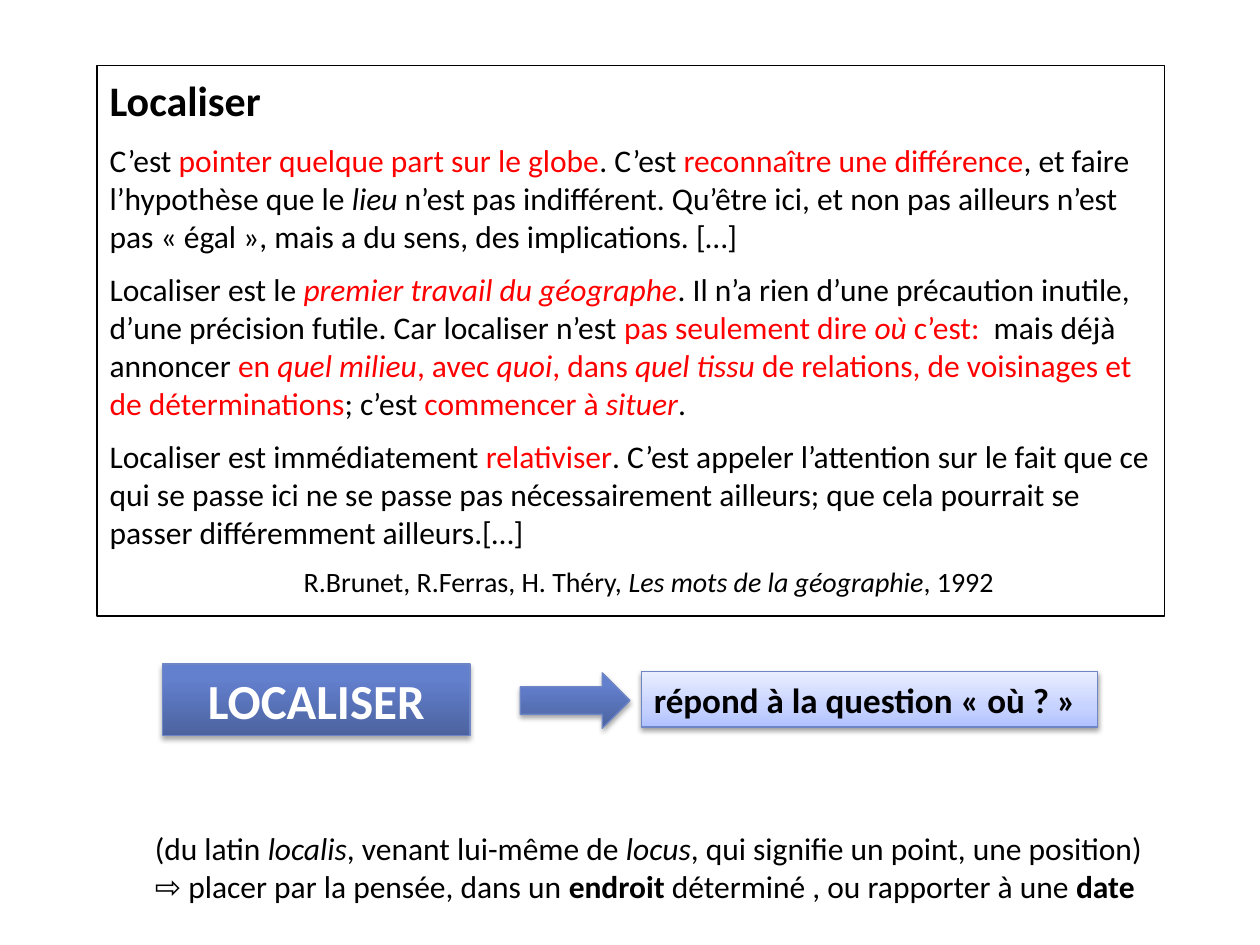
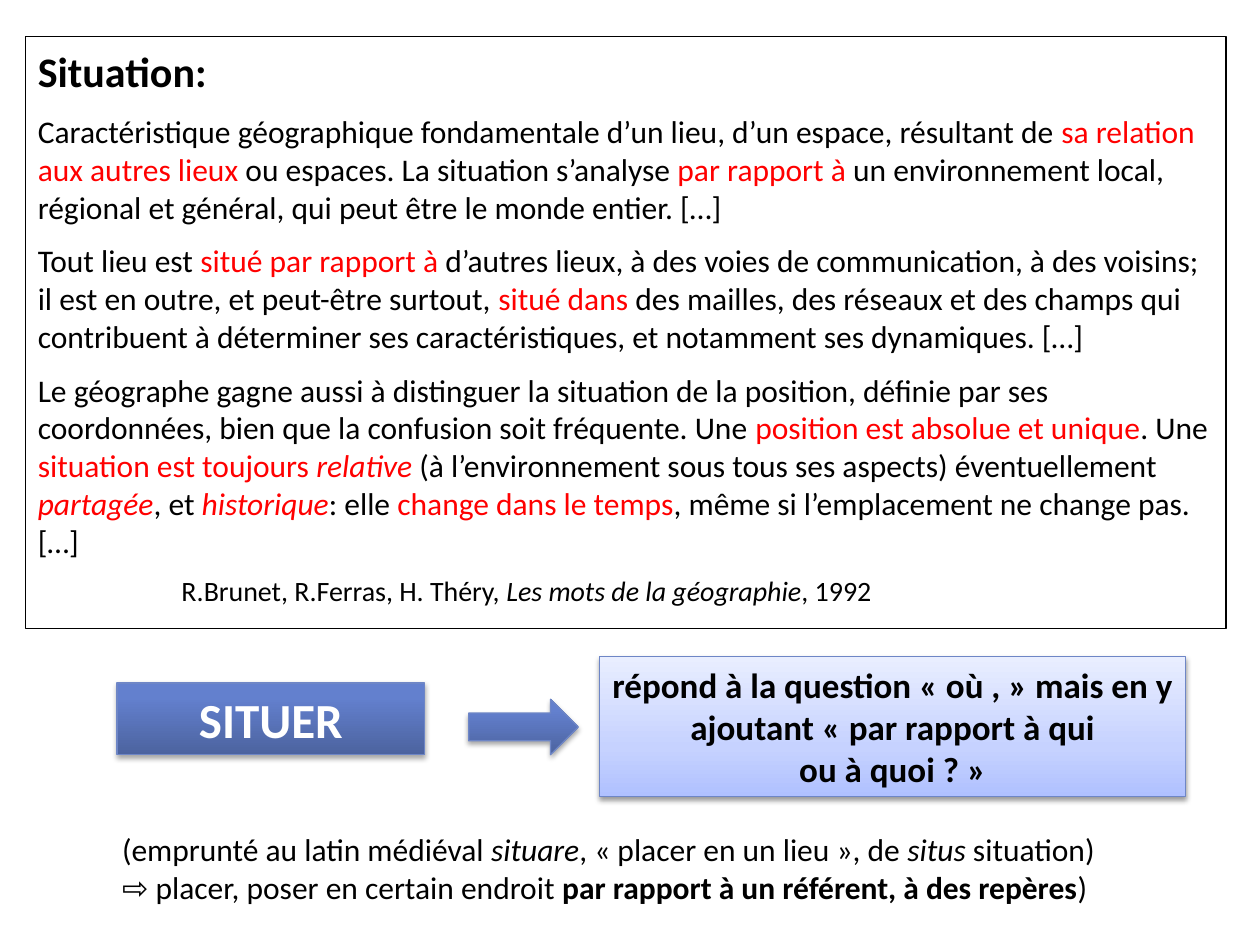
"""Builds two slides that define the geography terms localiser and situation."""
from dataclasses import dataclass

from lxml.etree import SubElement
from pptx import Presentation
from pptx.dml.color import RGBColor
from pptx.enum.shapes import MSO_SHAPE
from pptx.enum.text import MSO_ANCHOR, MSO_AUTO_SIZE, PP_ALIGN
from pptx.oxml.ns import qn
from pptx.util import Inches, Pt


@dataclass(frozen=True)
class Theme:
    font: str = "Calibri"
    ink: str = "000000"
    accent: str = "FF0000"
    light: str = "FFFFFF"
    edge: str = "6E86C6"
    dark_blue: tuple = ((0, "4C639F"), (80, "6380CE"), (100, "6180D1"))
    pale_blue: tuple = ((0, "B0C1FF"), (35, "C6D2FF"), (100, "E9EEFF"))
    title: int = 24
    body: int = 18
    source: int = 16
    verb: int = 28
    answer: int = 20
    rule: float = 0.75


T = Theme()
SOURCE = "R.Brunet, R.Ferras, H. Théry, _Les mots de la géographie_, 1992"
VERB_SIZE = (2.44, 0.57)
ARROW_SIZE = (0.87, 0.44)
ORIGIN_SIZE = (8.19, 0.71)
TITLE_DROP, TITLE_HEIGHT, BODY_INSET = 0.02, 0.52, 0.6

# Markup: {red}, _italic_, *bold*
SLIDES = [
    dict(
        title="Localiser",
        frame=(0.77, 0.52, 8.47, 4.37),
        body=[
            "C’est {pointer quelque part sur le globe}. C’est {reconnaître une différence}, et faire "
            "l’hypothèse que le _lieu_ n’est pas indifférent. Qu’être ici, et non pas ailleurs n’est "
            "pas « égal », mais a du sens, des implications. […]",
            "Localiser est le {_premier travail du géographe_}. Il n’a rien d’une précaution inutile, "
            "d’une précision futile. Car localiser n’est {pas seulement dire _où_ c’est:}  mais déjà "
            "annoncer {en _quel milieu_, avec _quoi_, dans _quel tissu_ de relations, de voisinages et "
            "de déterminations}; c’est {commencer à _situer_}.",
            "Localiser est immédiatement {relativiser}. C’est appeler l’attention sur le fait que ce "
            "qui se passe ici ne se passe pas nécessairement ailleurs; que cela pourrait se passer "
            "différemment ailleurs.[…]",
        ],
        source_indent=1.54,
        verb=("LOCALISER", (1.29, 5.27)),
        arrow=(4.13, 5.34),
        answer=("répond à la question « où ? »", (5.09, 5.33, 3.62, 0.44), PP_ALIGN.LEFT),
        origin=(1.13, 6.53),
        origin_lines=[
            "(du latin _localis_, venant lui-même de _locus_, qui signifie un point, une position)",
            "⇨ placer par la pensée, dans un *endroit* déterminé , ou rapporter à une *date*",
        ],
    ),
    dict(
        title="Situation:",
        frame=(0.2, 0.29, 9.53, 4.7),
        body=[
            "Caractéristique géographique fondamentale d’un lieu, d’un espace, résultant de {sa relation "
            "aux autres lieux} ou espaces. La situation s’analyse {par rapport à} un environnement local, "
            "régional et général, qui peut être le monde entier. […]",
            "Tout lieu est {situé par rapport à} d’autres lieux, à des voies de communication, à des "
            "voisins; il est en outre, et peut-être surtout, {situé dans} des mailles, des réseaux et des "
            "champs qui contribuent à déterminer ses caractéristiques, et notamment ses dynamiques. […]",
            "Le géographe gagne aussi à distinguer la situation de la position, définie par ses "
            "coordonnées, bien que la confusion soit fréquente. Une {position est absolue et unique}. Une "
            "{situation est toujours _relative_} (à l’environnement sous tous ses aspects) éventuellement "
            "{_partagée_}, et {_historique_}: elle {change dans le temps}, même si l’emplacement ne "
            "change pas. […]",
        ],
        source_indent=1.14,
        verb=("SITUER", (0.93, 5.42)),
        arrow=(3.72, 5.55),
        answer=("répond à la question « où , » mais en y ajoutant « par rapport à qui\vou à quoi ? »",
                (4.76, 5.21, 4.65, 1.11), PP_ALIGN.CENTER),
        origin=(0.87, 6.54),
        origin_lines=[
            "(emprunté au latin médiéval _situare_, « placer en un lieu », de _situs_ situation)",
            "⇨ placer, poser en certain endroit *par rapport à un référent, à des repères*)",
        ],
    ),
]


def rgb(value):
    return RGBColor.from_string(value)


def place(sp, left, top, width, height):
    sp.left, sp.top, sp.width, sp.height = map(Inches, (left, top, width, height))


def style(p, size, color=T.ink, bold=False, align=PP_ALIGN.LEFT):
    p.alignment = align
    p.font.name, p.font.size, p.font.bold = T.font, Pt(size), bold
    p.font.color.rgb = rgb(color)


def add_runs(p, text):
    marks = {"{": "red", "}": "red", "_": "italic", "*": "bold"}
    on, piece = set(), ""

    def flush():
        if piece:
            r = p.add_run()
            r.text = piece
            if "red" in on:
                r.font.color.rgb = rgb(T.accent)
            if "italic" in on:
                r.font.italic = True
            if "bold" in on:
                r.font.bold = True

    for ch in text:
        if ch in marks:
            flush()
            on ^= {marks[ch]}
            piece = ""
        else:
            piece += ch
    flush()


def add_paragraphs(tf, texts, size):
    for i, text in enumerate(texts):
        p = tf.paragraphs[0] if i == 0 else tf.add_paragraph()
        style(p, size)
        add_runs(p, text)


def add_definition(s, item):
    left, top, width, height = item["frame"]
    body = s.placeholders[1]
    place(body, left, top, width, height)
    body.line.color.rgb, body.line.width = rgb(T.ink), Pt(T.rule)
    tf = body.text_frame
    tf.auto_size, tf.vertical_anchor = MSO_AUTO_SIZE.NONE, MSO_ANCHOR.TOP
    tf.margin_top = Inches(BODY_INSET)
    add_paragraphs(tf, item["body"] + [SOURCE], T.body)
    source = tf.paragraphs[-1]
    source.font.size = Pt(T.source)
    for i, p in enumerate(tf.paragraphs):
        p.space_before = Pt(0) if i == 0 else p.font.size // 2
        pPr = p._p.get_or_add_pPr()
        pPr.set("marL", str(Inches(item["source_indent"]) if p._p is source._p else 0))
        pPr.set("indent", "0")
        pPr.insert_element_before(pPr.makeelement(qn("a:buNone")), "a:tabLst", "a:defRPr", "a:extLst")

    title = s.shapes.title
    place(title, left, top + TITLE_DROP, width, TITLE_HEIGHT)
    title.text_frame.text = item["title"]
    title.text_frame.auto_size = MSO_AUTO_SIZE.NONE
    title.text_frame.vertical_anchor = MSO_ANCHOR.TOP
    style(title.text_frame.paragraphs[0], T.title, bold=True)


def add_glossy(s, kind, box, stops, alpha=35, dist=1.8):
    sp = s.shapes.add_shape(kind, *map(Inches, box))
    sp.fill.gradient()
    sp.fill.gradient_angle = 90
    gs_list = sp._element.spPr.find(qn("a:gradFill")).find(qn("a:gsLst"))
    for old in list(gs_list):
        gs_list.remove(old)
    for pos, color in stops:
        gs = SubElement(gs_list, qn("a:gs"), pos=str(pos * 1000))
        SubElement(gs, qn("a:srgbClr"), val=color)
    sp.line.color.rgb, sp.line.width = rgb(T.edge), Pt(T.rule)
    sp.shadow.inherit = False
    effects = sp._element.spPr.find(qn("a:effectLst"))
    shadow = SubElement(effects, qn("a:outerShdw"), blurRad=str(Pt(3.1)), dist=str(Pt(dist)),
                        dir="5400000", rotWithShape="0")
    color = SubElement(shadow, qn("a:srgbClr"), val=T.ink)
    SubElement(color, qn("a:alpha"), val=str(alpha * 1000))
    return sp


def add_label(sp, text, size, color, align):
    tf = sp.text_frame
    tf.word_wrap, tf.vertical_anchor = True, MSO_ANCHOR.MIDDLE
    p = tf.paragraphs[0]
    p.text = text
    style(p, size, color, True, align)


def add_summary(s, item):
    text, at = item["verb"]
    verb = add_glossy(s, MSO_SHAPE.RECTANGLE, at + VERB_SIZE, T.dark_blue)
    add_label(verb, text, T.verb, T.light, PP_ALIGN.CENTER)
    add_glossy(s, MSO_SHAPE.RIGHT_ARROW, item["arrow"] + ARROW_SIZE, T.dark_blue)
    text, box, align = item["answer"]
    answer = add_glossy(s, MSO_SHAPE.RECTANGLE, box, T.pale_blue, 38, 1.6)
    add_label(answer, text, T.answer, T.ink, align)
    origin = s.shapes.add_textbox(*map(Inches, item["origin"] + ORIGIN_SIZE))
    origin.text_frame.word_wrap = True
    add_paragraphs(origin.text_frame, item["origin_lines"], T.body)


def main():
    prs = Presentation()
    prs.slide_width, prs.slide_height = Inches(10), Inches(7.5)
    for item in SLIDES:
        s = prs.slides.add_slide(prs.slide_layouts[1])
        add_definition(s, item)
        add_summary(s, item)
    prs.save("out.pptx")


if __name__ == "__main__":
    main()
